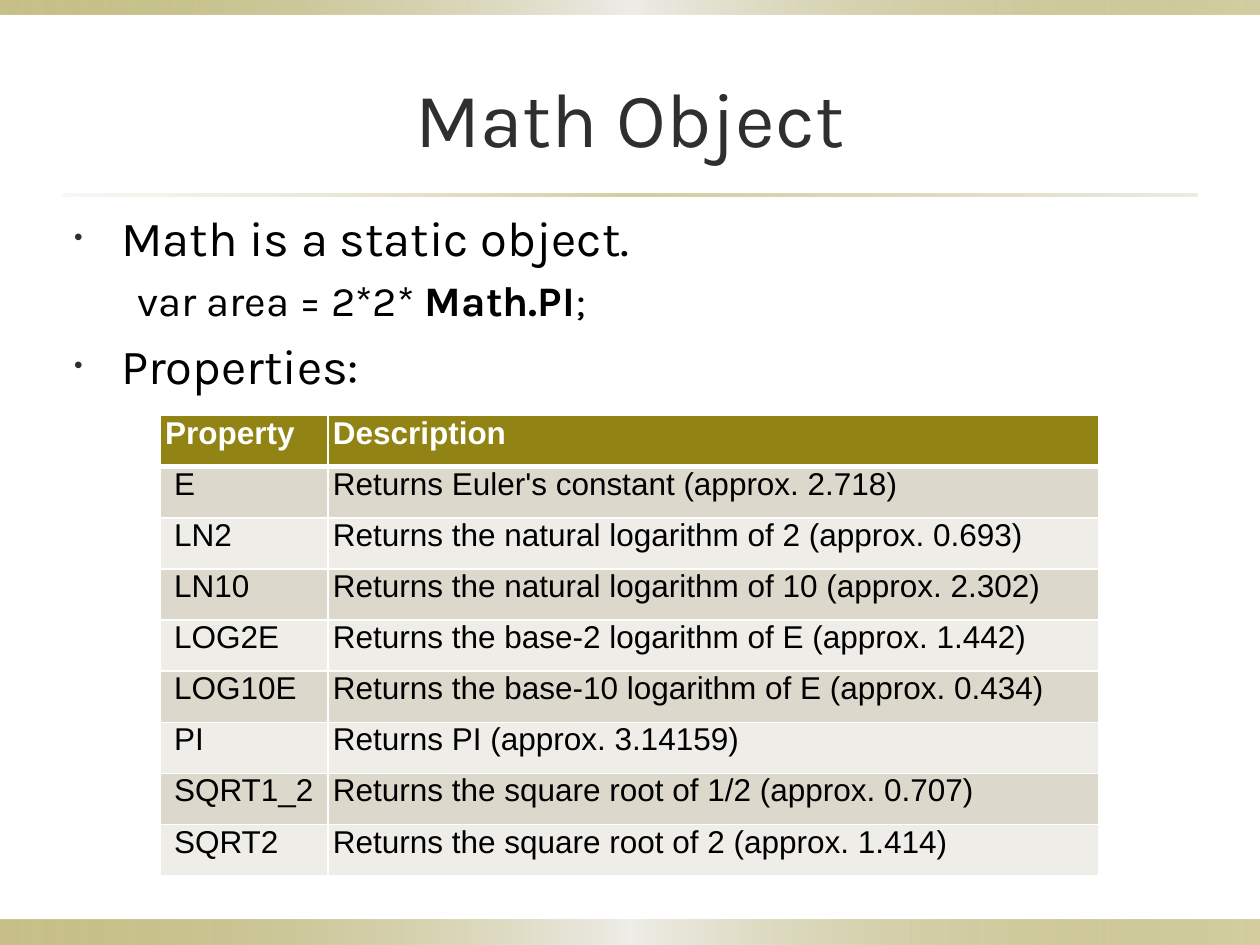
from lxml import etree
from pptx import Presentation
from pptx.dml.color import RGBColor
from pptx.enum.shapes import MSO_SHAPE
from pptx.enum.text import MSO_ANCHOR, MSO_AUTO_SIZE, PP_ALIGN
from pptx.oxml import parse_xml
from pptx.oxml.ns import qn
from pptx.util import Cm, Pt

COLORS = {
    "olive": "918415",
    "sand": "DCD9CC",
    "mist": "EEEDE8",
    "title": "2F2F2F",
    "text": "000000",
    "white": "FFFFFF",
}
NAMESPACE = 'xmlns:a="http://schemas.openxmlformats.org/drawingml/2006/main"'


def add_text(paragraph, text, size=18, font="Arial", color="text", bold=False):
    run = paragraph.add_run()
    run.text = text
    run.font.size = Pt(size)
    run.font.name = font
    run.font.bold = bold
    run.font.color.rgb = RGBColor.from_string(COLORS[color])


def add_gradient_bar(left, top, width, height, stops):
    """Add a rectangle whose stops are (position %, color, opacity %)."""
    bar = slide.shapes.add_shape(
        MSO_SHAPE.RECTANGLE, Cm(left), Cm(top), Cm(width), Cm(height))
    bar.shadow.inherit = False
    bar.line.fill.background()
    bar.fill.gradient()
    gradient = bar.fill._xPr.find(qn("a:gradFill"))
    stop_xml = "".join(
        f'<a:gs pos="{position * 1000}"><a:srgbClr val="{COLORS[color]}">'
        f'<a:alpha val="{opacity * 1000}"/></a:srgbClr></a:gs>'
        for position, color, opacity in stops)
    gradient.getparent().replace(gradient, parse_xml(
        f'<a:gradFill {NAMESPACE} rotWithShape="1"><a:gsLst>{stop_xml}</a:gsLst>'
        '<a:lin ang="0" scaled="1"/></a:gradFill>'))


presentation = Presentation()
presentation.slide_width = Cm(25.4)
presentation.slide_height = Cm(19.05)
slide = presentation.slides.add_slide(presentation.slide_layouts[1])

# Edge bars and the rule under the title
edge_stops = [(0, "olive", 50), (50, "mist", 100), (100, "olive", 40)]
rule_stops = [(0, "sand", 20), (50, "olive", 40), (100, "sand", 50)]
add_gradient_bar(0, 18.54, 25.4, 0.51, edge_stops)
add_gradient_bar(0, 0, 25.4, 0.3, edge_stops)
add_gradient_bar(1.27, 3.91, 22.86, 0.05, rule_stops)

# Title
title = slide.shapes.title
title.left, title.top, title.width, title.height = Cm(1.27), Cm(0.76), Cm(22.86), Cm(3.18)
title.text_frame.auto_size = MSO_AUTO_SIZE.NONE
title.text_frame.vertical_anchor = MSO_ANCHOR.MIDDLE
title_paragraph = title.text_frame.paragraphs[0]
title_paragraph.alignment = PP_ALIGN.CENTER
add_text(title_paragraph, "Math Object", size=44, font="Karla", color="title")

# List: (is bulleted, size, runs of text and boldness)
items = [
    (True, 28, [("Math is a static object.", False)]),
    (False, 24, [("var area = 2*2* ", False), ("Math.PI", True), (";", False)]),
    (True, 28, [("Properties:", False)]),
]
body = slide.placeholders[1]
body.left, body.top, body.width, body.height = Cm(1.24), Cm(4.06), Cm(22.86), Cm(13)
body.text_frame.auto_size = MSO_AUTO_SIZE.NONE
for index, (bulleted, size, runs) in enumerate(items):
    paragraph = body.text_frame.paragraphs[0] if index == 0 else body.text_frame.add_paragraph()
    properties = paragraph._p.get_or_add_pPr()
    if bulleted:
        margin, indent = Cm(0.95), Cm(-0.95)
        bullet_color = etree.SubElement(properties, qn("a:buClr"))
        etree.SubElement(bullet_color, qn("a:srgbClr"), val=COLORS["title"])
        etree.SubElement(properties, qn("a:buSzPct"), val="50000")
        etree.SubElement(properties, qn("a:buChar"), char="•")
    else:
        margin, indent = Cm(2.06), Cm(-0.79)
        paragraph.level = 1
        etree.SubElement(properties, qn("a:buNone"))
    properties.set("marL", str(margin))
    properties.set("indent", str(indent))
    paragraph.space_before = Pt(0 if index == 0 else size * 0.2)
    for text, bold in runs:
        add_text(paragraph, text, size=size, font="Karla", bold=bold)

# Table of properties
rows = [
    ("Property", "Description"),
    ("E", "Returns Euler's constant (approx. 2.718)"),
    ("LN2", "Returns the natural logarithm of 2 (approx. 0.693)"),
    ("LN10", "Returns the natural logarithm of 10 (approx. 2.302)"),
    ("LOG2E", "Returns the base-2 logarithm of E (approx. 1.442)"),
    ("LOG10E", "Returns the base-10 logarithm of E (approx. 0.434)"),
    ("PI", "Returns PI (approx. 3.14159)"),
    ("SQRT1_2", "Returns the square root of 1/2 (approx. 0.707)"),
    ("SQRT2", "Returns the square root of 2 (approx. 1.414)"),
]
column_widths = [3.38, 15.53]
row_height = 1.03
table = slide.shapes.add_table(
    len(rows), len(column_widths), Cm(3.23), Cm(8.38),
    Cm(sum(column_widths)), Cm(row_height * len(rows))).table
for column, width in zip(table.columns, column_widths):
    column.width = Cm(width)
for row_index, row in enumerate(rows):
    header = row_index == 0
    table.rows[row_index].height = Cm(row_height)
    fill_color = "olive" if header else ("mist", "sand")[row_index % 2]
    border_widths = {"L": 1, "R": 1, "T": 3 if row_index == 1 else 1, "B": 3 if header else 1}
    for column_index, text in enumerate(row):
        cell = table.cell(row_index, column_index)
        indented = column_index == 0 and not header
        cell.margin_left = Cm(0.28 if indented else 0.1)
        cell.margin_right = Cm(0.1)
        cell.margin_top = cell.margin_bottom = 0
        for side, width in border_widths.items():
            cell._tc.get_or_add_tcPr().append(parse_xml(
                f'<a:ln{side} {NAMESPACE} w="{Pt(width)}"><a:solidFill>'
                f'<a:srgbClr val="{COLORS["white"]}"/></a:solidFill></a:ln{side}>'))
        cell.fill.solid()
        cell.fill.fore_color.rgb = RGBColor.from_string(COLORS[fill_color])
        add_text(cell.text_frame.paragraphs[0], text,
                 color="white" if header else "text", bold=header)

presentation.save("out.pptx")
